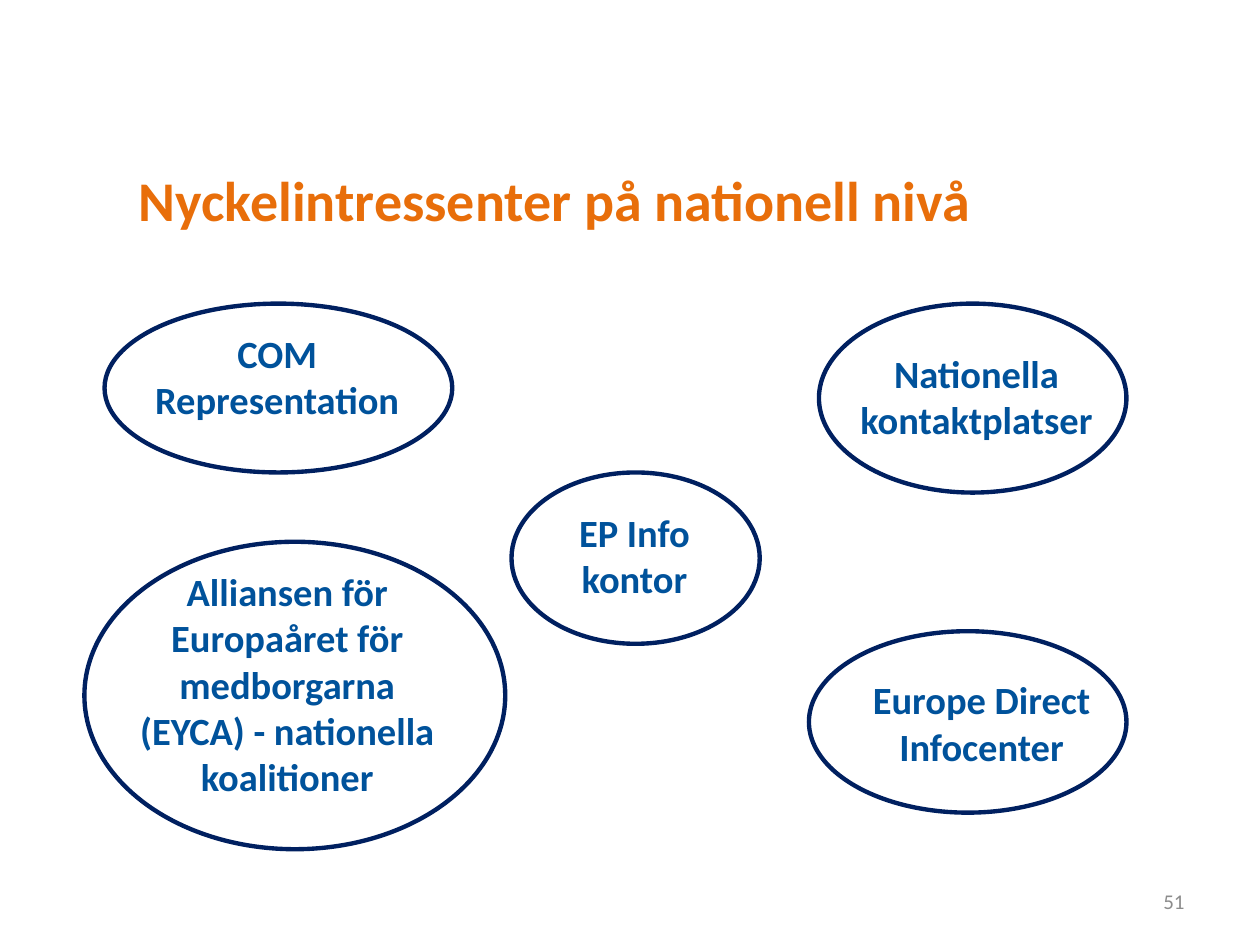
"""Build the slide about key stakeholders at national level."""
from pptx import Presentation
from pptx import util as u
from pptx.dml.color import RGBColor
from pptx.enum import shapes, text


def color(value):
    return RGBColor.from_string(value)


class Page:
    title_format = {"size": u.Pt(32), "bold": True, "color": "E86E0A"}
    label_format = {"size": u.Pt(22), "bold": True, "color": "00529B"}
    number_format = {"size": u.Pt(12), "bold": False, "color": "8C8C8C"}
    outline = "002060"

    def __init__(self, deck):
        self.slide = deck.slides.add_slide(deck.slide_layouts[5])

    def set_text(self, box, words, style, align, anchor):
        frame = box.text_frame
        frame.word_wrap = True
        frame.auto_size = text.MSO_AUTO_SIZE.NONE
        frame.vertical_anchor = anchor
        para = frame.paragraphs[0]
        para.alignment = align
        span = para.add_run()
        span.text = words
        span.font.name = "Calibri"
        for name, value in style.items():
            if name == "color":
                span.font.color.rgb = color(value)
            else:
                setattr(span.font, name, value)

    def title(self, words, place):
        box = self.slide.shapes.title
        box.left, box.top, box.width, box.height = map(u.Inches, place)
        self.set_text(box, words, self.title_format,
                      text.PP_ALIGN.LEFT, text.MSO_ANCHOR.MIDDLE)

    def label(self, words, place):
        box = self.slide.shapes.add_textbox(*map(u.Inches, place))
        self.set_text(box, words, self.label_format,
                      text.PP_ALIGN.CENTER, text.MSO_ANCHOR.TOP)

    def number(self, words, place):
        box = self.slide.shapes.add_textbox(*map(u.Inches, place))
        self.set_text(box, words, self.number_format,
                      text.PP_ALIGN.RIGHT, text.MSO_ANCHOR.MIDDLE)

    def ellipse(self, place):
        shape = self.slide.shapes.add_shape(
            shapes.MSO_SHAPE.OVAL, *map(u.Inches, place))
        shape.shadow.inherit = False
        shape.fill.background()
        shape.line.color.rgb = color(self.outline)
        shape.line.width = u.Pt(2.5)


STAKEHOLDERS = [
    ("Nationella kontaktplatser", (6.65, 2.73, 2.2, 0.84), (6.5, 2.41, 2.44, 1.5)),
    ("EP Info kontor", (4.29, 3.99, 1.49, 0.83), (4.06, 3.75, 1.97, 1.36)),
    ("Alliansen för Europaåret för medborgarna (EYCA) - nationella koalitioner",
     (0.9, 4.46, 2.76, 1.95), (0.67, 4.3, 3.34, 2.44)),
    ("COM Representation", (1.06, 2.57, 2.28, 0.84), (0.83, 2.41, 2.76, 1.34)),
    ("Europe Direct Infocenter", (6.73, 5.32, 2.12, 0.84), (6.42, 5.01, 2.52, 1.44)),
]


def main():
    deck = Presentation()
    deck.slide_width, deck.slide_height = u.Inches(10), u.Inches(7.5)
    page = Page(deck)
    page.title("Nyckelintressenter på nationell nivå", (1, 1.07, 9, 1.02))
    for words, label_place, ellipse_place in STAKEHOLDERS:
        page.label(words, label_place)
        page.ellipse(ellipse_place)
    page.number("51", (7.17, 6.95, 2.33, 0.4))
    deck.save("out.pptx")


if __name__ == "__main__":
    main()
